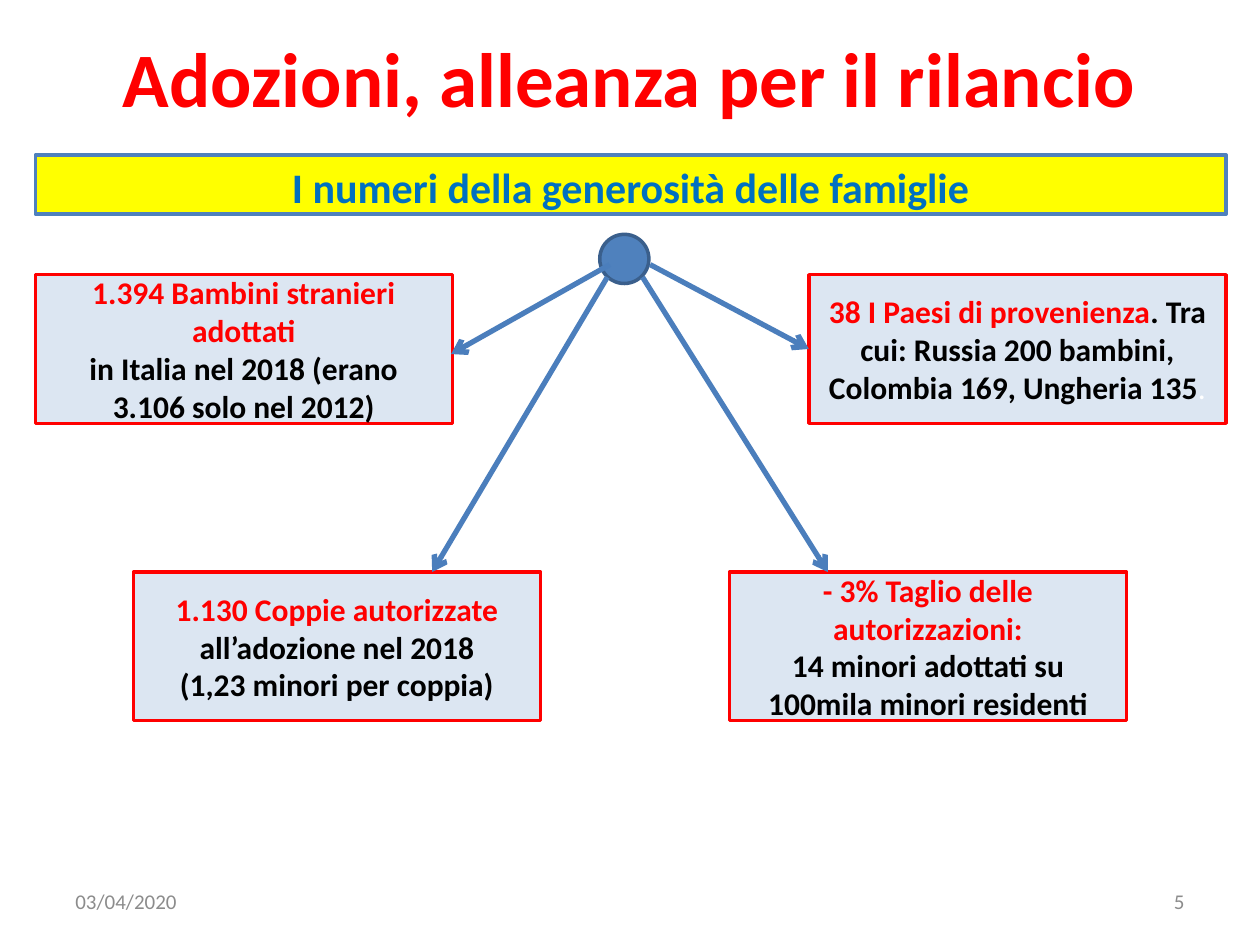
"""Build the slide on adoption figures, with four boxes fanning out from a hub."""
from lxml import etree
from pptx import Presentation
from pptx.dml.color import RGBColor
from pptx.enum.shapes import MSO_CONNECTOR, MSO_SHAPE
from pptx.enum.text import MSO_ANCHOR, PP_ALIGN
from pptx.oxml.ns import qn
from pptx.util import Inches, Pt

RECT, OVAL = MSO_SHAPE.RECTANGLE, MSO_SHAPE.OVAL
STRAIGHT = MSO_CONNECTOR.STRAIGHT
TOP, MIDDLE = MSO_ANCHOR.TOP, MSO_ANCHOR.MIDDLE
LEFT, CENTER, RIGHT = PP_ALIGN.LEFT, PP_ALIGN.CENTER, PP_ALIGN.RIGHT
RED, BLACK, WHITE, GREY = "FF0000", "000000", "FFFFFF", "8C8C8C"


def rgb(value):
    return RGBColor.from_string(value)


def write(sp, paragraphs, size, align=CENTER, anchor=MIDDLE, before=0):
    tf = sp.text_frame
    for name, value in {"word_wrap": True, "vertical_anchor": anchor}.items():
        setattr(tf, name, value)
    for i, runs in enumerate(paragraphs):
        p = tf.paragraphs[0] if i == 0 else tf.add_paragraph()
        for name, value in {"alignment": align, "space_before": Pt(before)}.items():
            setattr(p, name, value)
        for text, color, bold in runs:
            r = p.add_run()
            r.text = text
            font = {"name": "Calibri", "size": Pt(size), "bold": bold}
            for name, value in font.items():
                setattr(r.font, name, value)
            r.font.color.rgb = rgb(color)


prs = Presentation()
prs.slide_width, prs.slide_height = Inches(10), Inches(7.5)
s = prs.slides.add_slide(prs.slide_layouts[6])

labels = [
    ((0.75, 0.21, 8.5, 0.79), ("Adozioni, alleanza per il rilancio", RED, True), 44, CENTER),
    ((0.5, 6.95, 2.33, 0.4), ("03/04/2020", GREY, False), 12, LEFT),
    ((7.17, 6.95, 2.33, 0.4), ("5", GREY, False), 12, RIGHT),
]
for box, run, size, align in labels:
    sp = s.shapes.add_textbox(*map(Inches, box))
    write(sp, [[run]], size, align)

banner = [[("I numeri della generosità delle famiglie", "0070C0", True)]]
children = [
    [("1.394 Bambini stranieri adottati", RED, True)],
    [("in Italia nel 2018 (erano", BLACK, True)],
    [("3.106 solo nel 2012)", BLACK, True)],
]
couples = [
    [("1.130 Coppie autorizzate", RED, True)],
    [("all’adozione nel 2018", BLACK, True)],
    [("(1,23 minori per coppia)", BLACK, True)],
]
cuts = [
    [("- 3% Taglio delle autorizzazioni:", RED, True)],
    [("14 minori adottati su", BLACK, True)],
    [("100mila minori residenti", BLACK, True)],
]
countries = [
    [("38 I Paesi di provenienza", RED, True), (". Tra", BLACK, True)],
    [("cui: Russia 200 bambini,", BLACK, True)],
    [("Colombia 169, Ungheria 135", BLACK, True), (".", WHITE, False)],
]
panel = {"size": 18}
shapes = [
    (RECT, (0.28, 1.23, 9.45, 0.47), "FFFF00", "4F81BD", banner,
     {"size": 24, "anchor": TOP, "before": 4.8}),
    (RECT, (0.28, 2.18, 3.31, 1.18), "DCE6F2", RED, children, panel),
    (RECT, (1.06, 4.54, 3.23, 1.18), "DCE6F2", RED, couples, panel),
    (RECT, (5.79, 4.54, 3.15, 1.18), "DCE6F2", RED, cuts, panel),
    (RECT, (6.42, 2.18, 3.31, 1.18), "DCE6F2", RED, countries, panel),
    (OVAL, (4.76, 1.86, 0.39, 0.39), "4F81BD", "3A5F8C", [], panel),
]
for kind, box, fill, line, paragraphs, style in shapes:
    sp = s.shapes.add_shape(kind, *map(Inches, box))
    sp.shadow.inherit = False
    sp.fill.solid()
    sp.fill.fore_color.rgb = rgb(fill)
    sp.line.color.rgb = rgb(line)
    sp.line.width = Pt(2)
    write(sp, paragraphs, **style)

arrows = [
    (4.84, 2.1, 3.58, 2.81),
    (4.82, 2.2, 3.43, 4.54),
    (5.1, 2.2, 6.57, 4.54),
    (5.16, 2.1, 6.42, 2.77),
]
for ends in arrows:
    sp = s.shapes.add_connector(STRAIGHT, *map(Inches, ends))
    sp.line.color.rgb = rgb("4B7EBC")
    sp.line.width = Pt(3)
    etree.SubElement(sp.line._get_or_add_ln(), qn("a:tailEnd"), type="arrow")
    etree.SubElement(sp._element.spPr, qn("a:effectLst"))

prs.save("out.pptx")
